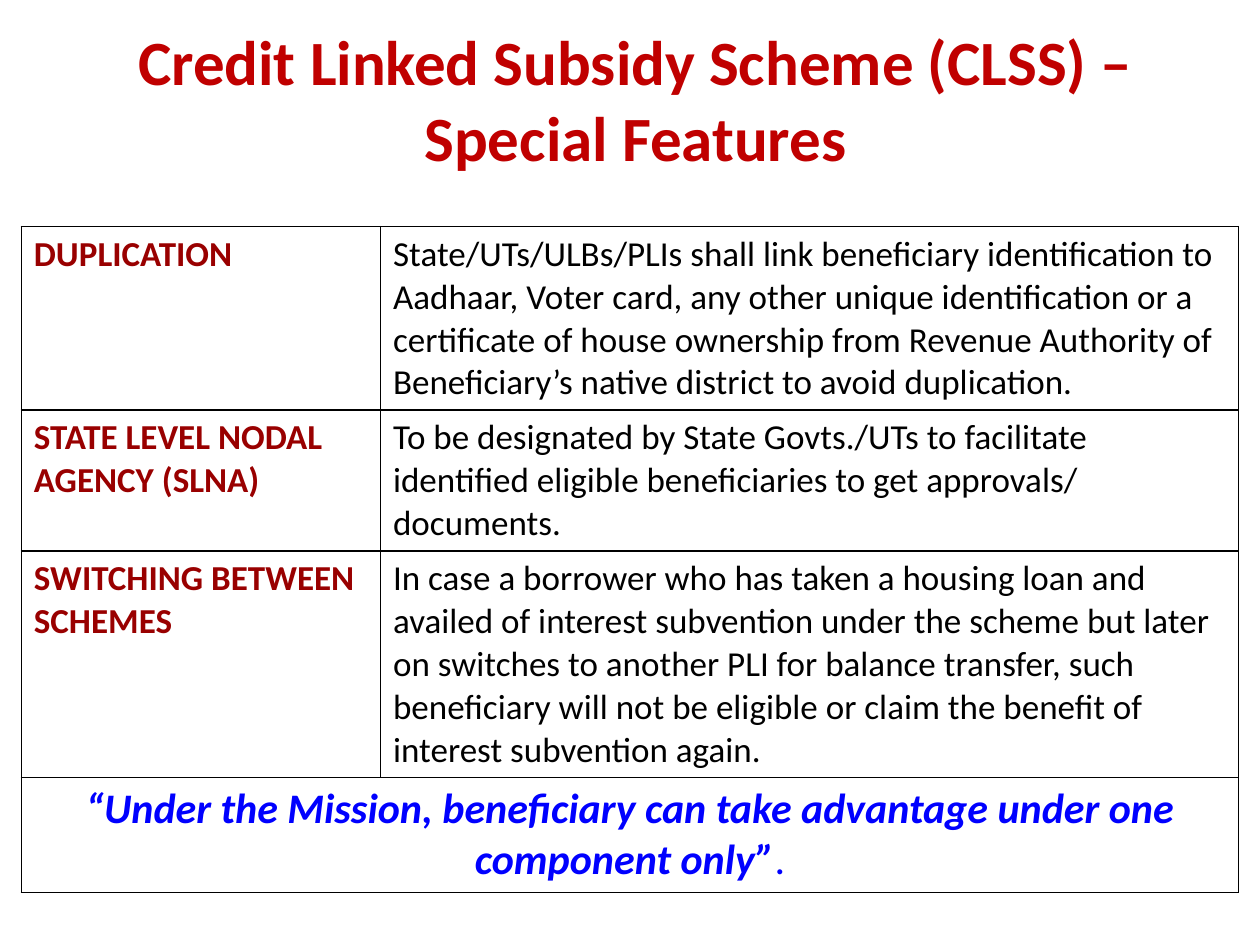
from lxml import etree
from pptx import Presentation
from pptx.dml.color import RGBColor
from pptx.enum.text import MSO_ANCHOR, PP_ALIGN
from pptx.oxml.ns import qn
from pptx.util import Cm, Pt

RED = RGBColor(0xC0, 0x00, 0x00)
MAROON = RGBColor(0x99, 0x00, 0x00)
BLACK = RGBColor(0x00, 0x00, 0x00)
BLUE = RGBColor(0x00, 0x00, 0xFF)

TITLE = "Credit Linked Subsidy Scheme (CLSS) – Special Features"
FEATURES = [
    ("DUPLICATION",
     "State/UTs/ULBs/PLIs shall link beneficiary identification to Aadhaar, "
     "Voter card, any other unique identification or a certificate of house "
     "ownership from Revenue Authority of Beneficiary’s native district to "
     "avoid duplication."),
    ("STATE LEVEL NODAL AGENCY (SLNA)",
     "To be designated by State Govts./UTs to facilitate identified eligible "
     "beneficiaries to get approvals/ documents."),
    ("SWITCHING BETWEEN SCHEMES",
     "In case a borrower who has taken a housing loan and availed of interest "
     "subvention under the scheme but later on switches to another PLI for "
     "balance transfer, such beneficiary will not be eligible or claim the "
     "benefit of interest subvention again."),
]
MISSION_RULE = "“Under the Mission, beneficiary can take advantage under one component only”"

COLUMN_WIDTHS = [7.24, 17.3]
ROW_HEIGHTS = [3.7, 2.84, 4.56, 2.32]

TITLE_FONT = {"size": Pt(36), "bold": True}
LABEL_FONT = {"size": Pt(20), "bold": True}
BODY_FONT = {"size": Pt(20), "bold": False}
RULE_FONT = {"size": Pt(24), "bold": True, "italic": True}
STOP_FONT = {"size": Pt(24), "bold": False, "italic": False}


def add_run(p, text, font, color):
    r = p.add_run()
    r.text = text
    for name, value in {"name": "Calibri", **font}.items():
        setattr(r.font, name, value)
    r.font.color.rgb = color


def outline_cell(cell):
    """Give the cell no fill and a thin black border on all sides."""
    cell.fill.background()
    tc_pr = cell._tc.get_or_add_tcPr()
    for i, side in enumerate(("a:lnL", "a:lnR", "a:lnT", "a:lnB")):
        line = etree.Element(qn(side), w=str(Pt(1)))
        fill = etree.SubElement(line, qn("a:solidFill"))
        etree.SubElement(fill, qn("a:srgbClr"), val=str(BLACK))
        tc_pr.insert(i, line)


def add_title(s):
    tf = s.shapes.add_textbox(Cm(1.45), Cm(1.17), Cm(22.73), Cm(1.63)).text_frame
    tf.word_wrap = True
    tf.vertical_anchor = MSO_ANCHOR.MIDDLE
    p = tf.paragraphs[0]
    p.alignment = PP_ALIGN.CENTER
    add_run(p, TITLE, TITLE_FONT, RED)


def add_feature_table(s):
    table = s.shapes.add_table(
        len(ROW_HEIGHTS), len(COLUMN_WIDTHS), Cm(0.43), Cm(4.57),
        Cm(sum(COLUMN_WIDTHS)), Cm(sum(ROW_HEIGHTS))).table
    table.first_row = table.horz_banding = False
    for column, width in zip(table.columns, COLUMN_WIDTHS):
        column.width = Cm(width)
    for row, height in zip(table.rows, ROW_HEIGHTS):
        row.height = Cm(height)
    for cell in table.iter_cells():
        outline_cell(cell)

    for i, (label, body) in enumerate(FEATURES):
        add_run(table.cell(i, 0).text_frame.paragraphs[0], label, LABEL_FONT, MAROON)
        add_run(table.cell(i, 1).text_frame.paragraphs[0], body, BODY_FONT, BLACK)

    last = len(FEATURES)
    rule_cell = table.cell(last, 0)
    rule_cell.merge(table.cell(last, 1))
    p = rule_cell.text_frame.paragraphs[0]
    p.alignment = PP_ALIGN.CENTER
    add_run(p, MISSION_RULE, RULE_FONT, BLUE)
    add_run(p, ".", STOP_FONT, BLUE)


def main():
    prs = Presentation()
    prs.slide_width, prs.slide_height = Cm(25.4), Cm(19.05)
    s = prs.slides.add_slide(prs.slide_layouts[6])
    add_title(s)
    add_feature_table(s)
    prs.save("out.pptx")


if __name__ == "__main__":
    main()
